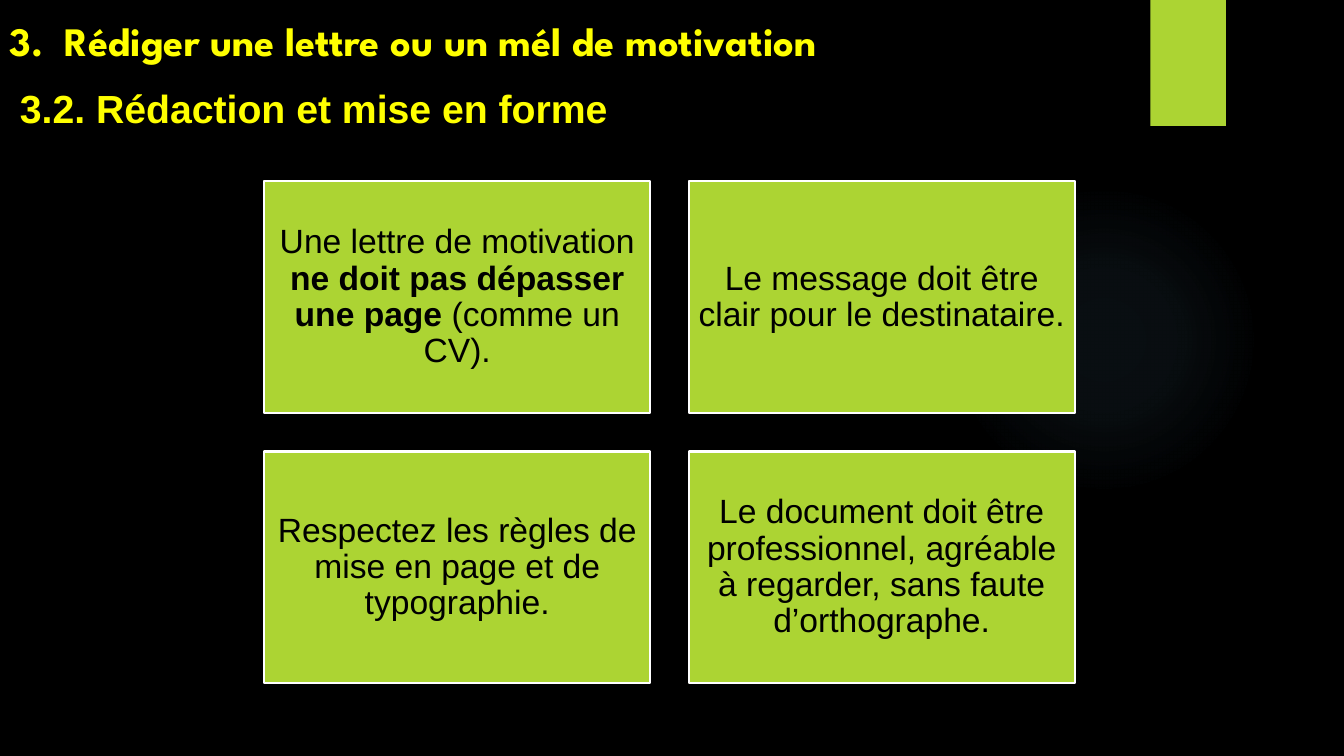
from dataclasses import dataclass

from pptx import Presentation
from pptx.dml.color import RGBColor
from pptx.enum.shapes import MSO_SHAPE
from pptx.enum.text import MSO_ANCHOR, PP_ALIGN
from pptx.oxml import parse_xml
from pptx.oxml.ns import nsdecls, qn
from pptx.util import Inches, Pt


@dataclass(frozen=True)
class Theme:
    """Colours, fonts and type sizes of the slide."""
    background: str = "000000"
    accent: str = "ACD433"
    glow: str = "7AC4F0"
    heading: str = "FFFF00"
    card_text: str = "000000"
    card_border: str = "FFFFFF"
    title_font: str = "League Spartan"
    body_font: str = "Arial"
    title_size: float = 28.8
    subtitle_size: float = 28
    card_size: float = 24


THEME = Theme()

CARDS = [
    [("Une lettre de motivation", False),
     (" ne doit pas dépasser une page", True),
     (" (comme un CV).", False)],
    [("Le message doit être clair pour le destinataire. ", False)],
    [("Respectez les règles de mise en page et de typographie.", False)],
    [("Le document doit être professionnel, agréable à regarder, "
      "sans faute d’orthographe.", False)],
]


def style_font(font, name, size, color, bold):
    """Apply face, size, colour and weight to a font."""
    font.name, font.size, font.bold = name, Pt(size), bold
    font.color.rgb = RGBColor.from_string(color)


def add_block(slide, preset, box, color):
    """Add a flat filled shape without outline."""
    block = slide.shapes.add_shape(preset, *map(Inches, box))
    block.shadow.inherit = False
    block.fill.solid()
    block.fill.fore_color.rgb = RGBColor.from_string(color)
    block.line.fill.background()
    return block


def add_decor(slide, glow_box, tab_box):
    """Add the faint round glow and the tab at the top edge."""
    glow = add_block(slide, MSO_SHAPE.OVAL, glow_box, THEME.glow)
    stops = "".join(
        f'<a:gs pos="{place * 1000}"><a:srgbClr val="{THEME.glow}">'
        f'<a:alpha val="{opacity * 1000}"/></a:srgbClr></a:gs>'
        for place, opacity in ((0, 7), (36, 6), (69, 0), (100, 0)))
    gradient = parse_xml(
        f'<a:gradFill {nsdecls("a")} rotWithShape="1"><a:gsLst>{stops}</a:gsLst>'
        '<a:path path="circle"><a:fillToRect l="50000" t="50000" r="50000" b="50000"/>'
        '</a:path></a:gradFill>')
    properties = glow.element.spPr
    properties.replace(properties.find(qn("a:solidFill")), gradient)
    add_block(slide, MSO_SHAPE.RECTANGLE, tab_box, THEME.accent)


def add_heading(slide, box, text, font_name, size, hanging, anchor):
    """Add a one-line heading with a hanging indent."""
    frame = slide.shapes.add_textbox(*map(Inches, box)).text_frame
    frame.word_wrap = True
    frame.vertical_anchor = anchor
    paragraph = frame.paragraphs[0]
    paragraph.text = text
    properties = paragraph._p.get_or_add_pPr()
    properties.set("marL", str(Inches(hanging)))
    properties.set("indent", str(-Inches(hanging)))
    style_font(paragraph.runs[0].font, font_name, size, THEME.heading, True)


def add_card(slide, box, phrases):
    """Add one bordered card with its centred message."""
    card = add_block(slide, MSO_SHAPE.RECTANGLE, box, THEME.accent)
    card.line.color.rgb = RGBColor.from_string(THEME.card_border)
    card.line.width = Pt(1.5)
    frame = card.text_frame
    frame.word_wrap = True
    frame.vertical_anchor = MSO_ANCHOR.MIDDLE
    frame.margin_left = frame.margin_right = Inches(0.1)
    frame.margin_top = frame.margin_bottom = Inches(0.1)
    message = frame.paragraphs[0]
    message.alignment = PP_ALIGN.CENTER
    message.line_spacing = 0.9
    for words, bold in phrases:
        phrase = message.add_run()
        phrase.text = words
        style_font(phrase.font, THEME.body_font, THEME.card_size, THEME.card_text, bold)


def add_card_grid(slide, box, cards, columns=2, gap=0.38):
    """Spread the cards over equal cells of the box."""
    left, top, width, height = box
    rows = -(-len(cards) // columns)
    card_width = (width - gap * (columns - 1)) / columns
    card_height = (height - gap * (rows - 1)) / rows
    for index, phrases in enumerate(cards):
        row, column = divmod(index, columns)
        add_card(slide, (left + column * (card_width + gap),
                         top + row * (card_height + gap),
                         card_width, card_height), phrases)


def main():
    """Build the slide and save it."""
    deck = Presentation()
    deck.slide_width, deck.slide_height = Inches(13.33), Inches(7.5)
    slide = deck.slides.add_slide(deck.slide_layouts[6])
    slide.background.fill.solid()
    slide.background.fill.fore_color.rgb = RGBColor.from_string(THEME.background)
    add_decor(slide, (9.41, 1.83, 3.08, 3.08), (11.41, 0, 0.75, 1.25))
    add_heading(slide, (0, 0, 9.65, 0.69),
                "3.\tRédiger une lettre ou un mél de motivation",
                THEME.title_font, THEME.title_size, 0.54, MSO_ANCHOR.BOTTOM)
    add_heading(slide, (0.1, 0.79, 6.74, 0.57), "3.2. Rédaction et mise en forme",
                THEME.body_font, THEME.subtitle_size, 0.25, MSO_ANCHOR.TOP)
    add_card_grid(slide, (2.62, 1.8, 8.04, 4.98), CARDS)
    deck.save("out.pptx")


if __name__ == "__main__":
    main()
